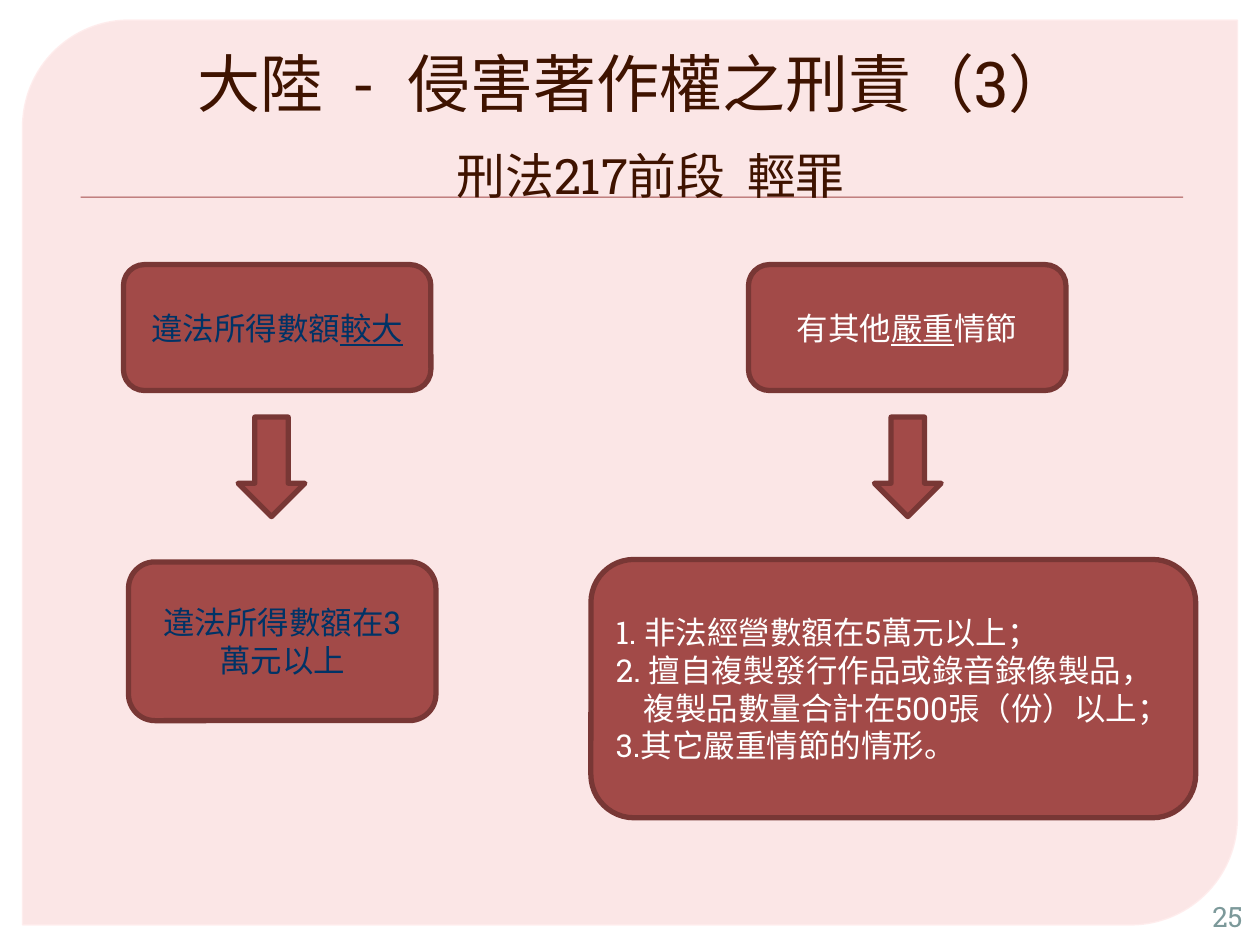
from lxml import etree
from pptx import Presentation
from pptx.dml.color import RGBColor
from pptx.enum.shapes import MSO_SHAPE
from pptx.enum.text import MSO_ANCHOR, PP_ALIGN
from pptx.oxml.ns import qn
from pptx.util import Inches, Pt

FONT = "Roboto Slab"
PINK = RGBColor(0xF9, 0xDA, 0xDA)
PALE_PINK = RGBColor(0xFF, 0xEC, 0xEC)
RED = RGBColor(0xA2, 0x4A, 0x48)
DARK_RED = RGBColor(0x78, 0x37, 0x35)
BROWN = RGBColor(0x3F, 0x13, 0x00)
NAVY = RGBColor(0x00, 0x33, 0x66)
WHITE = RGBColor(0xFF, 0xFF, 0xFF)
GREY_GREEN = RGBColor(0x7C, 0x99, 0x9A)
PANEL = MSO_SHAPE.ROUND_2_DIAG_RECTANGLE
RECTANGLE = MSO_SHAPE.RECTANGLE
ROUNDED = MSO_SHAPE.ROUNDED_RECTANGLE
DOWN_ARROW = MSO_SHAPE.DOWN_ARROW
LEFT, CENTER, RIGHT = PP_ALIGN.LEFT, PP_ALIGN.CENTER, PP_ALIGN.RIGHT
MIDDLE, BOTTOM = MSO_ANCHOR.MIDDLE, MSO_ANCHOR.BOTTOM


def add_run(paragraph, text, size, color, underline=None):
    """Append one styled run to a paragraph."""
    run = paragraph.add_run()
    run.text = text
    run.font.name = FONT
    run.font.size = Pt(size)
    run.font.color.rgb = color
    run.font.underline = underline


def add_filled_shape(slide, kind, box, fill=RED, line=DARK_RED, line_width=3):
    """Add a preset shape without shadow; no outline when line is None."""
    shape = slide.shapes.add_shape(kind, *map(Inches, box))
    shape.shadow.inherit = False
    shape.fill.solid()
    shape.fill.fore_color.rgb = fill
    if line is None:
        shape.line.fill.background()
    else:
        shape.line.color.rgb = line
        shape.line.width = Pt(line_width)
    return shape


def set_alpha(color_fill, percent):
    """Set the opacity of a solid fill element."""
    color = color_fill.find(qn("a:srgbClr"))
    etree.SubElement(color, qn("a:alpha")).set("val", str(percent * 1000))


def add_backdrop(slide, panel_box, rule_box):
    """Draw the pale panel and the rule under the title."""
    panel = add_filled_shape(slide, PANEL, panel_box, PINK, PALE_PINK, 0.87)
    panel.adjustments[0] = 0.118
    panel.adjustments[1] = 0
    properties = panel.element.spPr
    set_alpha(properties.find(qn("a:solidFill")), 65)
    set_alpha(properties.find(qn("a:ln")).find(qn("a:solidFill")), 88)
    add_filled_shape(slide, RECTANGLE, rule_box, line=None)


def add_text_box(slide, box, anchor, alignment):
    """Add a wrapping text box and return its first paragraph."""
    frame = slide.shapes.add_textbox(*map(Inches, box)).text_frame
    frame.word_wrap = True
    frame.vertical_anchor = anchor
    paragraph = frame.paragraphs[0]
    paragraph.alignment = alignment
    return paragraph


def add_title(slide, box):
    """Write the two-line title."""
    paragraph = add_text_box(slide, box, BOTTOM, CENTER)
    add_run(paragraph, "大陸  -  侵害著作權之刑責（3）", 36, BROWN)
    add_run(paragraph, " ", 41.4, BROWN)
    paragraph.add_line_break()
    add_run(paragraph, " ", 41.4, BROWN)
    add_run(paragraph, "刑法217前段  輕罪", 27.9, BROWN)


def add_card(slide, box, lines, color, alignment=CENTER):
    """Draw a rounded card; each line is an indent and (text, underline) runs."""
    frame = add_filled_shape(slide, ROUNDED, box).text_frame
    frame.word_wrap = True
    frame.vertical_anchor = MIDDLE
    for index, (indent, runs) in enumerate(lines):
        paragraph = frame.add_paragraph() if index else frame.paragraphs[0]
        paragraph.alignment = alignment
        if indent:
            paragraph._p.get_or_add_pPr().set("indent", str(Inches(indent)))
        for text, underline in runs:
            add_run(paragraph, text, 18, color, underline)


def add_branch(slide, cause, arrow_box, result, color, result_alignment):
    """Draw a cause card, a down arrow and a result card."""
    add_card(slide, *cause, color)
    add_filled_shape(slide, DOWN_ARROW, arrow_box)
    add_card(slide, *result, color, result_alignment)


def add_page_number(slide, box):
    """Write the page number."""
    add_run(add_text_box(slide, box, MIDDLE, RIGHT), "25", 16, GREY_GREEN)


def main():
    """Build and save the slide."""
    presentation = Presentation()
    presentation.slide_width = Inches(10)
    presentation.slide_height = Inches(7.5)
    slide = presentation.slides.add_slide(presentation.slide_layouts[6])
    add_backdrop(slide, (0.18, 0.16, 9.64, 7.18), (0.64, 1.56, 8.75, 0.01))
    add_title(slide, (0.2, 0.17, 9.8, 1.54))
    add_branch(
        slide,
        ((0.98, 2.1, 2.44, 1), [(0, [("違法所得數額", None), ("較大", True)])]),
        (1.89, 3.31, 0.53, 0.79),
        ((1.02, 4.46, 2.44, 1.26), [(0, [("違法所得數額在3萬元以上", None)])]),
        NAVY,
        CENTER,
    )
    conditions = [
        (0, "1. 非法經營數額在5萬元以上；"),
        (0, "2. 擅自複製發行作品或錄音錄像製品，"),
        (0.22, "複製品數量合計在500張（份）以上；"),
        (0, "3.其它嚴重情節的情形。"),
    ]
    add_branch(
        slide,
        (
            (5.94, 2.1, 2.52, 1),
            [(0, [("有其他", None), ("嚴重", True), ("情節", None)])],
        ),
        (6.94, 3.31, 0.53, 0.79),
        (
            (4.69, 4.44, 4.8, 2.05),
            [(indent, [(text, None)]) for indent, text in conditions],
        ),
        WHITE,
        LEFT,
    )
    add_page_number(slide, (9.45, 7.12, 0.51, 0.3))
    presentation.save("out.pptx")


if __name__ == "__main__":
    main()
